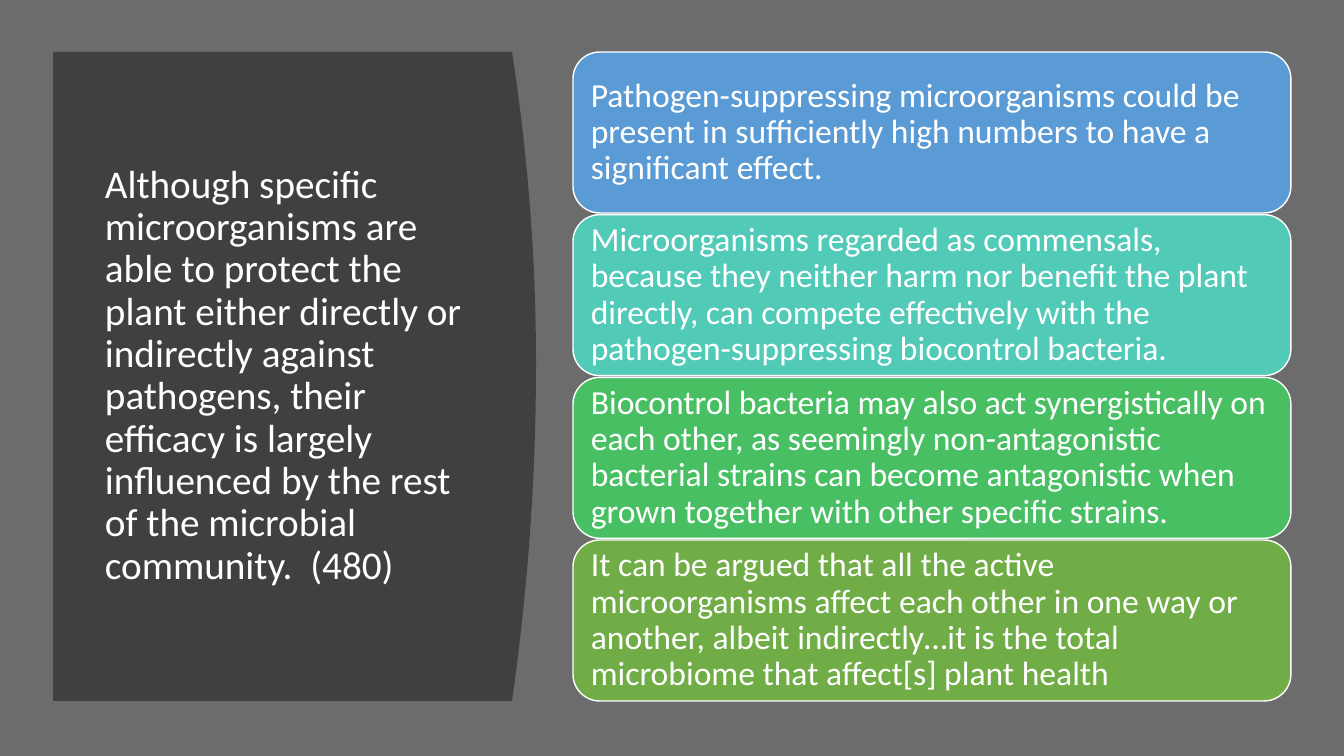
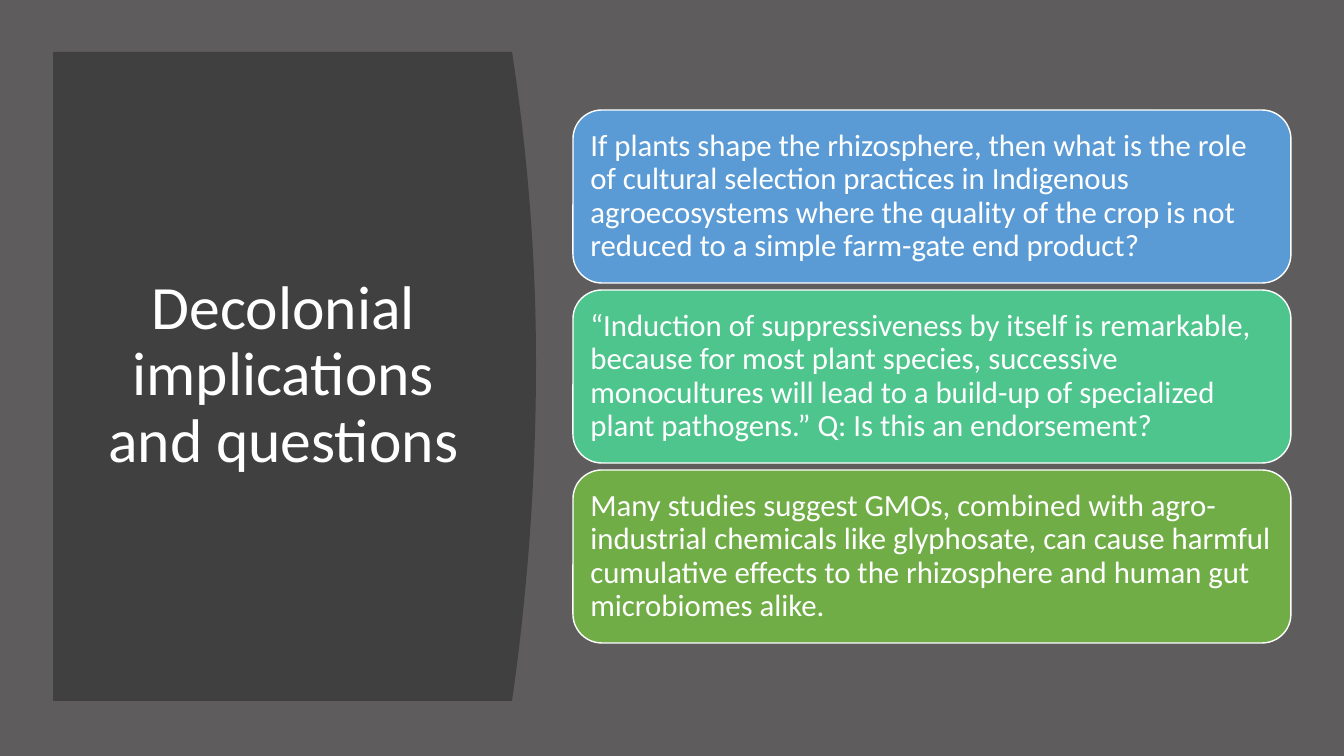
from pptx import Presentation
from pptx.dml.color import RGBColor
from pptx.enum import shapes, text
from pptx.util import Pt

EMU_PER_PX = 914400 / 100.8
SLIDE_W, SLIDE_H = 1344, 756
FONT = "Calibri"
WHITE, CHARCOAL = "FFFFFF", "404040"
PANEL = (53, 52, 483, 649)
BULGE = 24          # how far the panel's right edge swells
PEAK = 0.48         # height share at which it swells most
CURVE_STEPS = 40
LEFT, CENTER = text.PP_ALIGN.LEFT, text.PP_ALIGN.CENTER

SLIDES = [
    {
        "background": "6C6C6C",
        "title": ["Although specific microorganisms are able to protect the plant either "
                  "directly or indirectly against pathogens, their efficacy is largely "
                  "influenced by the rest of the microbial community.  (480)"],
        "title_box": (95, 112, 404, 528), "title_size": 28, "title_align": LEFT,
        "cards_box": (573, 52, 718, 649), "card_height": 161,
        "card_size": 24, "card_inset": 10,
        "cards": [
            ("5B9BD5", "Pathogen-suppressing microorganisms could be present in "
                       "sufficiently high numbers to have a significant effect."),
            ("52CAB8", "Microorganisms regarded as commensals, because they neither harm "
                       "nor benefit the plant directly, can compete effectively with the "
                       "pathogen-suppressing biocontrol bacteria."),
            ("49BF64", "Biocontrol bacteria may also act synergistically on each other, as "
                       "seemingly non-antagonistic bacterial strains can become "
                       "antagonistic when grown together with other specific strains."),
            ("70AD47", "It can be argued that all the active microorganisms affect each "
                       "other in one way or another, albeit indirectly…it is the total "
                       "microbiome that affect[s] plant health"),
        ],
    },
    {
        "background": "5E5C5C",
        "title": ["Decolonial implications", "and questions"],
        "title_box": (95, 112, 377, 528), "title_size": 44, "title_align": CENTER,
        "cards_box": (573, 110, 718, 533), "card_height": 173,
        "card_size": 22, "card_inset": 9,
        "cards": [
            ("5B9BD5", "If plants shape the rhizosphere, then what is the role of cultural "
                       "selection practices in Indigenous agroecosystems where the quality "
                       "of the crop is not reduced to a simple farm-gate end product?"),
            ("4DC58D", "“Induction of suppressiveness by itself is remarkable, because for "
                       "most plant species, successive monocultures will lead to a build-up "
                       "of specialized plant pathogens.” Q: Is this an endorsement?"),
            ("70AD47", "Many studies suggest GMOs, combined with agro-industrial chemicals "
                       "like glyphosate, can cause harmful cumulative effects to the "
                       "rhizosphere and human gut microbiomes alike."),
        ],
    },
]


def px(length):
    return round(length * EMU_PER_PX)


def paint(fill, color):
    fill.solid()
    fill.fore_color.rgb = RGBColor.from_string(color)


def write(frame, lines, size, align, inset=10):
    """Fill a frame with one paragraph, its lines parted by line breaks."""
    frame.word_wrap = True
    frame.vertical_anchor = text.MSO_ANCHOR.MIDDLE
    frame.margin_left = frame.margin_right = px(inset)
    frame.margin_top = frame.margin_bottom = px(inset)
    paragraph = frame.paragraphs[0]
    paragraph.alignment = align
    paragraph.line_spacing = 0.9
    for i, line in enumerate(lines):
        if i:
            paragraph.add_line_break()
        run = paragraph.add_run()
        run.text = line
        run.font.name = FONT
        run.font.size = Pt(size)
        run.font.color.rgb = RGBColor.from_string(WHITE)


def add_panel(slide, box):
    """Dark panel whose right edge is a shallow parabola."""
    left, top, width, height = box
    edge = []
    for step in range(CURVE_STEPS + 1):
        share = step / CURVE_STEPS
        reach = PEAK if share < PEAK else 1 - PEAK
        swell = BULGE * (1 - ((share - PEAK) / reach) ** 2)
        edge.append((px(left + width - BULGE + swell), px(top + share * height)))
    outline = slide.shapes.build_freeform(px(left), px(top), scale=1.0)
    outline.add_line_segments(edge + [(px(left), px(top + height))], close=True)
    panel = outline.convert_to_shape()
    panel.shadow.inherit = False
    paint(panel.fill, CHARCOAL)
    panel.line.fill.background()


def add_title(slide, box, lines, size, align):
    title = slide.shapes.add_textbox(*map(px, box))
    write(title.text_frame, lines, size, align)


def add_cards(slide, box, cards, card_height, size, inset):
    """Stack of rounded cards spread evenly over the box."""
    left, top, width, height = box
    pitch = (height - card_height) / (len(cards) - 1)
    for i, (color, statement) in enumerate(cards):
        card = slide.shapes.add_shape(
            shapes.MSO_SHAPE.ROUNDED_RECTANGLE,
            px(left), px(top + i * pitch), px(width), px(card_height))
        card.shadow.inherit = False
        paint(card.fill, color)
        paint(card.line.fill, WHITE)
        card.line.width = Pt(1)
        write(card.text_frame, [statement], size, LEFT, inset)


def add_statement_slide(deck, content):
    slide = deck.slides.add_slide(deck.slide_layouts[6])
    paint(slide.background.fill, content["background"])
    add_panel(slide, PANEL)
    add_title(slide, content["title_box"], content["title"],
              content["title_size"], content["title_align"])
    add_cards(slide, content["cards_box"], content["cards"], content["card_height"],
              content["card_size"], content["card_inset"])


def main():
    deck = Presentation()
    deck.slide_width, deck.slide_height = px(SLIDE_W), px(SLIDE_H)
    for content in SLIDES:
        add_statement_slide(deck, content)
    deck.save("out.pptx")


if __name__ == "__main__":
    main()
